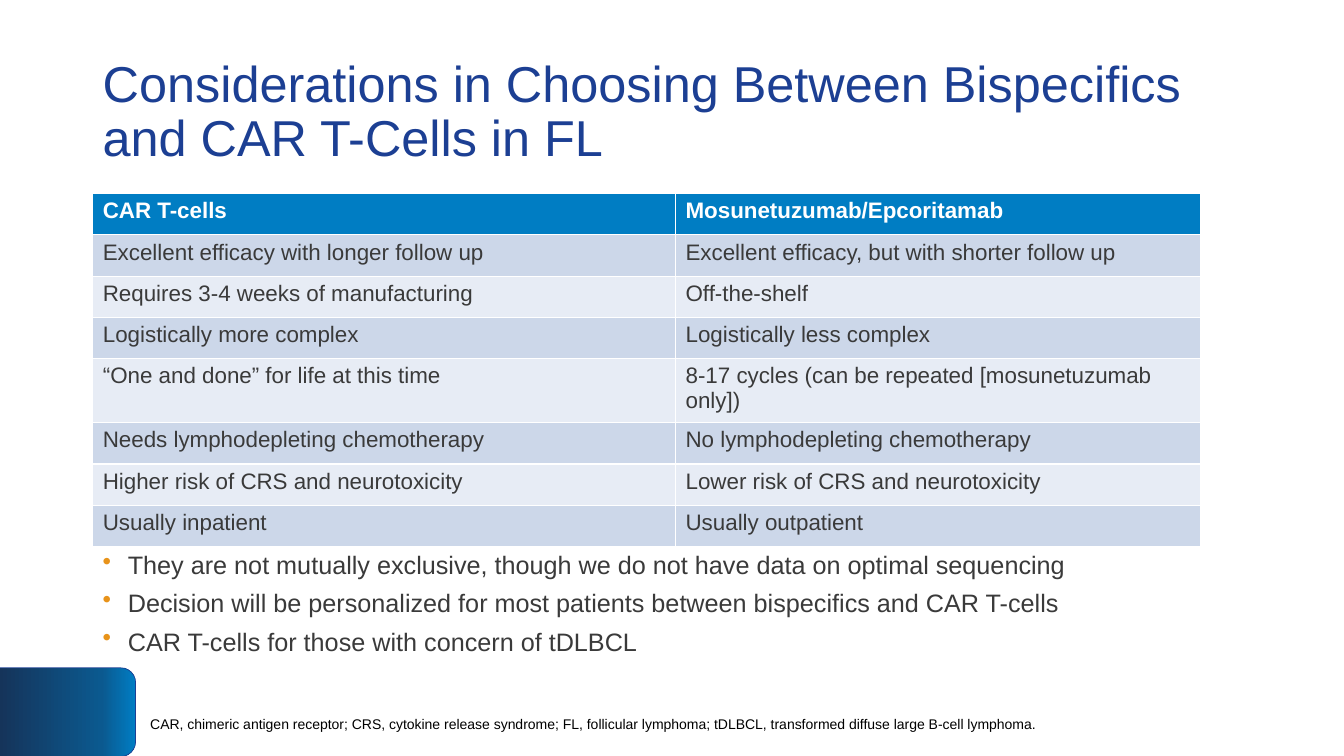
from dataclasses import dataclass

from lxml.etree import SubElement
from pptx import Presentation
from pptx.dml.color import RGBColor
from pptx.enum.shapes import MSO_SHAPE as Shape
from pptx.enum.text import MSO_ANCHOR as Anchor
from pptx.oxml.ns import qn
from pptx.util import Inches, Pt

# Content
TITLE = "Considerations in Choosing Between Bispecifics and CAR T-Cells in FL"
COMPARISON = [
    ("CAR T-cells", "Mosunetuzumab/Epcoritamab"),
    ("Excellent efficacy with longer follow up",
     "Excellent efficacy, but with shorter follow up"),
    ("Requires 3-4 weeks of manufacturing", "Off-the-shelf"),
    ("Logistically more complex", "Logistically less complex"),
    ("“One and done” for life at this time",
     "8-17 cycles (can be repeated [mosunetuzumab only])"),
    ("Needs lymphodepleting chemotherapy", "No lymphodepleting chemotherapy"),
    ("Higher risk of CRS and neurotoxicity", "Lower risk of CRS and neurotoxicity"),
    ("Usually inpatient", "Usually outpatient"),
]
TAKEAWAYS = [
    "They are not mutually exclusive, though we do not have data on optimal sequencing",
    "Decision will be personalized for most patients between bispecifics and CAR T-cells",
    "CAR T-cells for those with concern of tDLBCL",
]
ABBREVIATIONS = (
    "CAR, chimeric antigen receptor; CRS, cytokine release syndrome; "
    "FL, follicular lymphoma; tDLBCL, transformed diffuse large B-cell lymphoma."
)


@dataclass(frozen=True)
class Theme:
    font: str = "Arial"
    title: str = "1C3F93"
    text: str = "3A3A3A"
    note: str = "000000"
    white: str = "FFFFFF"
    bullet: str = "E8931A"
    header: str = "007DC3"
    bands: tuple = ("E7ECF5", "CCD7E9")
    corner: tuple = ((0, "007DC3"), (25, "0B598F"), (100, "15345A"))
    title_size: int = 36
    body_size: int = 18
    table_size: int = 16
    note_size: int = 10


THEME = Theme()

# Layout, in inches
LEFT, WIDTH = 0.92, 11.5
TABLE_TOP, ROW_HEIGHT = 1.92, 0.41
COLUMN_WIDTHS = (5.78, 5.21)
INDENT = 0.25


def style(paragraph, size, color, bold=False):
    font = paragraph.font
    font.name, font.size, font.bold = THEME.font, Pt(size), bold
    font.color.rgb = RGBColor.from_string(color)


def add_color(parent, color):
    SubElement(parent, qn("a:srgbClr"), val=color)


def add_text(slide, box, lines, size, color, spacing, anchor=Anchor.TOP, inset=None):
    frame = slide.shapes.add_textbox(*map(Inches, box)).text_frame
    frame.word_wrap = True
    frame.vertical_anchor = anchor
    if inset is not None:
        frame.margin_left = frame.margin_right = Inches(inset)
        frame.margin_top = frame.margin_bottom = Inches(inset)
    frame.text = "\n".join(lines)
    for paragraph in frame.paragraphs:
        paragraph.line_spacing = spacing
        style(paragraph, size, color)
    return frame


def add_bullet(paragraph):
    properties = paragraph._p.get_or_add_pPr()
    properties.set("marL", str(Inches(INDENT)))
    properties.set("indent", str(-Inches(INDENT)))
    bullet_color = properties.makeelement(qn("a:buClr"))
    add_color(bullet_color, THEME.bullet)
    bullet_char = properties.makeelement(qn("a:buChar"), char="•")
    defaults = properties.find(qn("a:defRPr"))
    defaults.addprevious(bullet_color)
    defaults.addprevious(bullet_char)


def add_borders(cell):
    properties = cell._tc.get_or_add_tcPr()
    for side in ("lnL", "lnR", "lnT", "lnB"):
        border = SubElement(properties, qn(f"a:{side}"), w=str(Pt(1)))
        add_color(SubElement(border, qn("a:solidFill")), THEME.white)


def add_corner(slide):
    corner = slide.shapes.add_shape(
        Shape.ROUND_2_SAME_RECTANGLE, *map(Inches, (0.23, 6.39, 0.88, 1.35)))
    corner.rotation = 90
    corner.shadow.inherit = False
    corner.line.color.rgb = RGBColor.from_string(THEME.title)
    corner.line.width = Pt(0.5)
    corner.fill.gradient()
    corner.fill.gradient_angle = 270
    stops = corner._element.spPr.find(qn("a:gradFill")).find(qn("a:gsLst"))
    for stop in list(stops):
        stops.remove(stop)
    for percent, color in THEME.corner:
        add_color(SubElement(stops, qn("a:gs"), pos=str(percent * 1000)), color)


def add_comparison(slide):
    box = (LEFT, TABLE_TOP, sum(COLUMN_WIDTHS), ROW_HEIGHT * len(COMPARISON))
    table = slide.shapes.add_table(
        len(COMPARISON), len(COLUMN_WIDTHS), *map(Inches, box)).table
    for column, width in zip(table.columns, COLUMN_WIDTHS):
        column.width = Inches(width)
    for r, entries in enumerate(COMPARISON):
        table.rows[r].height = Inches(ROW_HEIGHT)
        is_header = r == 0
        for c, entry in enumerate(entries):
            cell = table.cell(r, c)
            cell.text = entry
            style(cell.text_frame.paragraphs[0], THEME.table_size,
                  THEME.white if is_header else THEME.text, is_header)
            add_borders(cell)
            cell.fill.solid()
            cell.fill.fore_color.rgb = RGBColor.from_string(
                THEME.header if is_header else THEME.bands[r % 2])


def main():
    deck = Presentation()
    deck.slide_width, deck.slide_height = Inches(13.33), Inches(7.5)
    slide = deck.slides.add_slide(deck.slide_layouts[6])

    # Corner ornament and title
    add_corner(slide)
    add_text(slide, (LEFT, 0.4, WIDTH, 1.45), [TITLE],
             THEME.title_size, THEME.title, 0.9, Anchor.MIDDLE)

    # Takeaways below the table
    takeaways = add_text(slide, (LEFT, 5.46, WIDTH, 1.17), TAKEAWAYS,
                         THEME.body_size, THEME.text, 0.8)
    for i, paragraph in enumerate(takeaways.paragraphs):
        if i:
            paragraph.space_before = Pt(10)
        add_bullet(paragraph)

    # Abbreviations and comparison table
    add_text(slide, (1.49, 6.96, 9.53, 0.42), [ABBREVIATIONS],
             THEME.note_size, THEME.note, 1.12, Anchor.MIDDLE, inset=0)
    add_comparison(slide)

    deck.save("out.pptx")


if __name__ == "__main__":
    main()
